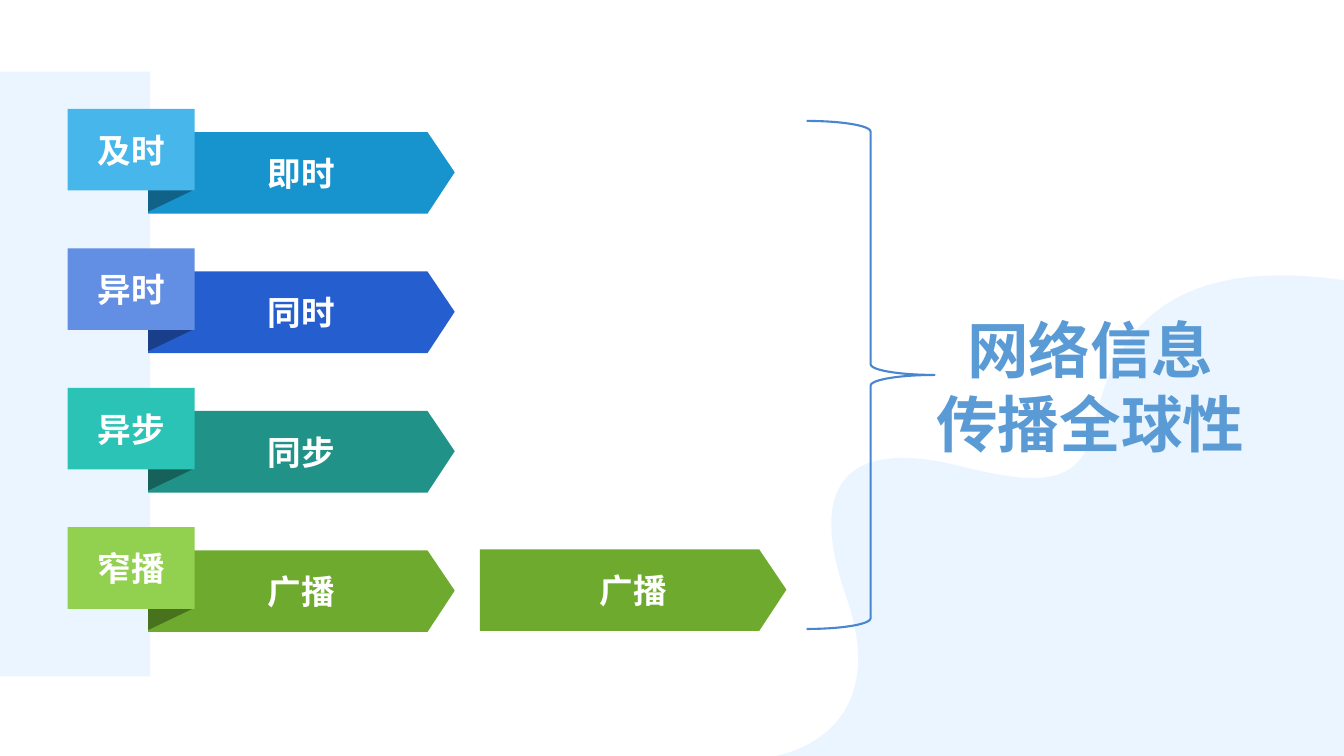
from lxml.etree import SubElement
from pptx import Presentation
from pptx.dml.color import RGBColor as RGB
from pptx.enum.shapes import MSO_SHAPE as Preset
from pptx.enum.text import MSO_ANCHOR as Anchor, MSO_AUTO_SIZE as AutoSize, PP_ALIGN as Align
from pptx.oxml.ns import qn
from pptx.util import Inches, Pt

FONT = "Noto Sans CJK SC"
COLORS = {"pale": "EBF5FF", "white": "FFFFFF", "brace": "4886D0", "title": "5B9BD5"}
TITLE = "网络信息\n传播全球性"
ROWS = [
    {"tag": "及时", "banner": "即时", "light": "47B6EA", "main": "1793CD", "dark": "106289"},
    {"tag": "异时", "banner": "同时", "light": "628EE3", "main": "255FCF", "dark": "193F8A"},
    {"tag": "异步", "banner": "同步", "light": "2BC3B5", "main": "209288", "dark": "16625A"},
    {"tag": "窄播", "banner": "广播", "light": "92D050", "main": "6EAA2E", "dark": "49721E"},
]
EXTRA_BANNER = {"text": "广播", "left": 4.76, "top": 5.45}

TAG_LEFT, TAG_WIDTH, TAG_HEIGHT = 0.67, 1.26, 0.81
FIRST_TOP, LAST_TOP = 1.08, 5.23
ROW_PITCH = (LAST_TOP - FIRST_TOP) / (len(ROWS) - 1)
BANNER_LEFT, BANNER_DROP = 1.47, 0.23
BANNER_OUTLINE = [(0, 0), (2.77, 0), (3.04, 0.4), (2.77, 0.81), (0, 0.81)]
FOLD_DROP = 0.64
FOLD_OUTLINE = [(0, 0), (0.46, 0.16), (0, 0.38)]
WAVE_START = (7.69, 7.5)
WAVE_CURVES = [
    [(7.69, 7.5), (8.89, 7.32), (8.39, 5.91)],
    [(7.9, 4.5), (8.75, 4.44), (9.46, 4.61)],
    [(10.18, 4.79), (10.68, 4.86), (10.82, 4.33)],
    [(10.96, 3.8), (11.14, 2.46), (13.33, 2.78)],
]
WAVE_CORNER = (13.33, 7.5)
CURVE_STEPS = 30


def paint(shape, fill):
    shape.shadow.inherit = False
    shape.fill.solid()
    shape.fill.fore_color.rgb = RGB.from_string(fill)
    shape.line.fill.background()
    return shape


def write(shape, text, size, color):
    frame = shape.text_frame
    frame.text = text
    frame.word_wrap = True
    frame.vertical_anchor = Anchor.MIDDLE
    for paragraph in frame.paragraphs:
        paragraph.alignment = Align.CENTER
        for run in paragraph.runs:
            run.font.name = FONT
            run.font.size = Pt(size)
            run.font.bold = True
            run.font.color.rgb = RGB.from_string(color)
            SubElement(run.font._element, qn("a:ea")).set("typeface", FONT)
    return frame


def polygon(shapes, outline, fill, left=0, top=0):
    points = [(Inches(left + x), Inches(top + y)) for x, y in outline]
    builder = shapes.build_freeform(*points[0])
    builder.add_line_segments(points[1:], close=True)
    return paint(builder.convert_to_shape(), fill)


def rectangle(shapes, left, top, width, height, fill):
    box = [Inches(value) for value in (left, top, width, height)]
    return paint(shapes.add_shape(Preset.RECTANGLE, *box), fill)


def bezier(start, first, second, end):
    for step in range(1, CURVE_STEPS + 1):
        t = step / CURVE_STEPS
        weights = ((1 - t) ** 3, 3 * t * (1 - t) ** 2, 3 * t * t * (1 - t), t ** 3)
        yield tuple(
            sum(w * point[axis] for w, point in zip(weights, (start, first, second, end)))
            for axis in (0, 1)
        )


def wave_outline():
    outline = [WAVE_START]
    for curve in WAVE_CURVES:
        outline.extend(bezier(outline[-1], *curve))
    return outline + [WAVE_CORNER]


def add_banner(shapes, text, left, top, fill):
    banner = polygon(shapes, BANNER_OUTLINE, fill, left, top)
    write(banner, text, 24, COLORS["white"])


def add_row(shapes, row, top):
    add_banner(shapes, row["banner"], BANNER_LEFT, top + BANNER_DROP, row["main"])
    polygon(shapes, FOLD_OUTLINE, row["dark"], BANNER_LEFT, top + FOLD_DROP)
    tag = rectangle(shapes, TAG_LEFT, top, TAG_WIDTH, TAG_HEIGHT, row["light"])
    frame = write(tag, row["tag"], 24, COLORS["white"])
    frame.margin_left = frame.margin_right = frame.margin_top = frame.margin_bottom = 0


def add_brace(shapes):
    brace = shapes.add_shape(Preset.RIGHT_BRACE, Inches(8), Inches(1.2), Inches(1.27), Inches(5.04))
    brace.shadow.inherit = False
    brace.fill.background()
    brace.line.color.rgb = RGB.from_string(COLORS["brace"])
    brace.line.width = Pt(1.5)


def place_title(title):
    title.left, title.top = Inches(9.11), Inches(3.04)
    title.width, title.height = Inches(3.41), Inches(1.58)
    frame = write(title, TITLE, 44, COLORS["title"])
    frame.auto_size = AutoSize.NONE
    for paragraph in frame.paragraphs:
        paragraph.line_spacing = Pt(53)
    title._element.getparent().append(title._element)


def main():
    deck = Presentation()
    deck.slide_width, deck.slide_height = Inches(13.33), Inches(7.5)
    slide = deck.slides.add_slide(deck.slide_layouts[5])
    shapes = slide.shapes
    polygon(shapes, wave_outline(), COLORS["pale"])
    rectangle(shapes, -0.01, 0.71, 1.5, 6, COLORS["pale"])
    for index, row in enumerate(ROWS):
        add_row(shapes, row, FIRST_TOP + index * ROW_PITCH)
    add_banner(shapes, EXTRA_BANNER["text"], EXTRA_BANNER["left"], EXTRA_BANNER["top"], ROWS[-1]["main"])
    add_brace(shapes)
    place_title(shapes.title)
    deck.save("out.pptx")


if __name__ == "__main__":
    main()
